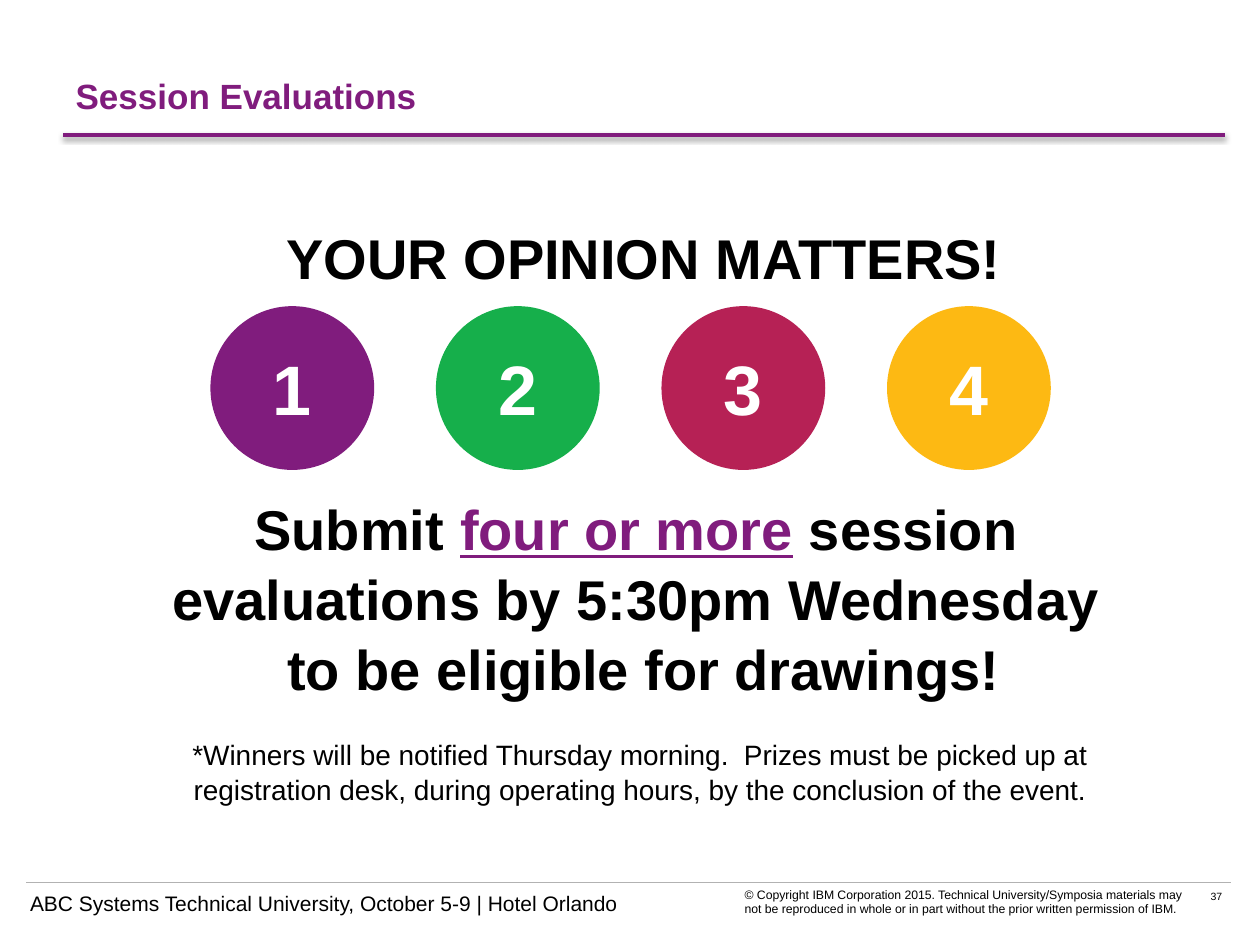
from lxml import etree
from pptx import Presentation
from pptx.dml.color import RGBColor
from pptx.enum import shapes, text
from pptx.oxml import ns
from pptx.util import Inches, Pt

FONT = "Arial"
COLORS = {
    "purple": "801C7D",
    "green": "16AF4B",
    "crimson": "B62155",
    "amber": "FDB913",
    "black": "000000",
    "white": "FFFFFF",
    "gray": "B2B2B2",
}


def rgb(name):
    return RGBColor.from_string(COLORS[name])


def style(paragraph, size, color="black", bold=False, align=text.PP_ALIGN.LEFT):
    font = paragraph.font
    font.name, font.size, font.bold = FONT, Pt(size), bold
    font.color.rgb = rgb(color)
    paragraph.alignment = align


def add_text_box(slide, left, top, width, height, margins=(0.1, 0.05, 0.1, 0.05)):
    """Add a wrapping text box; margins are left, top, right, bottom."""
    box = slide.shapes.add_textbox(
        Inches(left), Inches(top), Inches(width), Inches(height))
    frame = box.text_frame
    frame.word_wrap = True
    (frame.margin_left, frame.margin_top,
     frame.margin_right, frame.margin_bottom) = map(Inches, margins)
    return frame


def add_rule(slide, left, right, y, color, width, shadow=False):
    """Add a horizontal line, with a soft shadow below it if asked."""
    line = slide.shapes.add_connector(
        shapes.MSO_CONNECTOR.STRAIGHT,
        Inches(left), Inches(y), Inches(right), Inches(y))
    line.line.color.rgb = rgb(color)
    line.line.width = Pt(width)
    effects = etree.SubElement(line._element.spPr, ns.qn("a:effectLst"))
    if shadow:
        outer = etree.SubElement(
            effects, ns.qn("a:outerShdw"), blurRad=str(Pt(3.1)),
            dist=str(Pt(1.6)), dir="5400000", rotWithShape="0")
        black = etree.SubElement(outer, ns.qn("a:srgbClr"), val=COLORS["black"])
        etree.SubElement(black, ns.qn("a:alpha"), val="38000")


def add_title(slide):
    title = slide.shapes.title
    title.left, title.top = Inches(0.5), Inches(0.3)
    title.width, title.height = Inches(9.22), Inches(0.91)
    title.text_frame.text = "Session Evaluations"
    title.text_frame.vertical_anchor = text.MSO_ANCHOR.MIDDLE
    style(title.text_frame.paragraphs[0], 20, "purple", bold=True)


def add_lines(paragraph, lines):
    """Add runs separated by line breaks."""
    for index, line in enumerate(lines):
        if index:
            paragraph.add_line_break()
        paragraph.add_run().text = line


def add_message(slide):
    frame = add_text_box(slide, 0.5, 1.7, 9.22, 4.68)
    center = text.PP_ALIGN.CENTER

    headline = frame.paragraphs[0]
    headline.text = "YOUR OPINION MATTERS!"
    style(headline, 32, bold=True, align=center)

    request = frame.add_paragraph()
    request.space_before = Pt(115)
    style(request, 32, bold=True, align=center)
    request.add_run().text = "Submit "
    emphasis = request.add_run()
    emphasis.text = "four or more"
    emphasis.font.underline = True
    emphasis.font.color.rgb = rgb("purple")
    add_lines(request, [" session ", "evaluations by 5:30pm Wednesday ",
                        "to be eligible for drawings!"])

    footnote = frame.add_paragraph()
    footnote.space_before = Pt(20)
    style(footnote, 16, align=center)
    add_lines(footnote, [
        "*Winners will be notified Thursday morning.  Prizes must be picked up at ",
        "registration desk, during operating hours, by the conclusion of the event. "])

    for paragraph in frame.paragraphs:
        paragraph.line_spacing = 1.04


def add_numbered_circles(slide):
    diameter, pitch = 1.3, 1.79
    for index, color in enumerate(("purple", "green", "crimson", "amber")):
        circle = slide.shapes.add_shape(
            shapes.MSO_SHAPE.OVAL, Inches(1.67 + index * pitch), Inches(2.43),
            Inches(diameter), Inches(diameter))
        circle.shadow.inherit = False
        circle.fill.solid()
        circle.fill.fore_color.rgb = rgb(color)
        circle.line.fill.background()
        frame = circle.text_frame
        frame.vertical_anchor = text.MSO_ANCHOR.MIDDLE
        frame.text = str(index + 1)
        style(frame.paragraphs[0], 40, "white", bold=True,
              align=text.PP_ALIGN.CENTER)


def add_footer(slide):
    add_rule(slide, 0.21, 9.77, 7, "gray", 0.5)

    event = add_text_box(slide, 0.14, 7.02, 5.7, 0.3)
    event.text = "ABC Systems Technical University, October 5-9 | Hotel Orlando"
    style(event.paragraphs[0], 12)

    rights = add_text_box(slide, 5.86, 7.02, 3.58, 0.46, (0.05, 0.02, 0.05, 0.02))
    rights.text = ("© Copyright IBM Corporation 2015. Technical University/Symposia "
                   "materials may not be reproduced in whole or in part without "
                   "the prior written permission of IBM.")
    style(rights.paragraphs[0], 7)

    number = add_text_box(slide, 9.38, 6.96, 0.32, 0.2, (0, 0.1, 0, 0))
    number.text = "37"
    style(number.paragraphs[0], 6, align=text.PP_ALIGN.RIGHT)


def main():
    presentation = Presentation()
    presentation.slide_width, presentation.slide_height = Inches(10), Inches(7.5)
    title_only = presentation.slide_layouts[5]
    slide = presentation.slides.add_slide(title_only)
    add_title(slide)
    add_rule(slide, 0.5, 9.72, 1.07, "purple", 2, shadow=True)
    add_message(slide)
    add_numbered_circles(slide)
    add_footer(slide)
    presentation.save("out.pptx")


if __name__ == "__main__":
    main()
